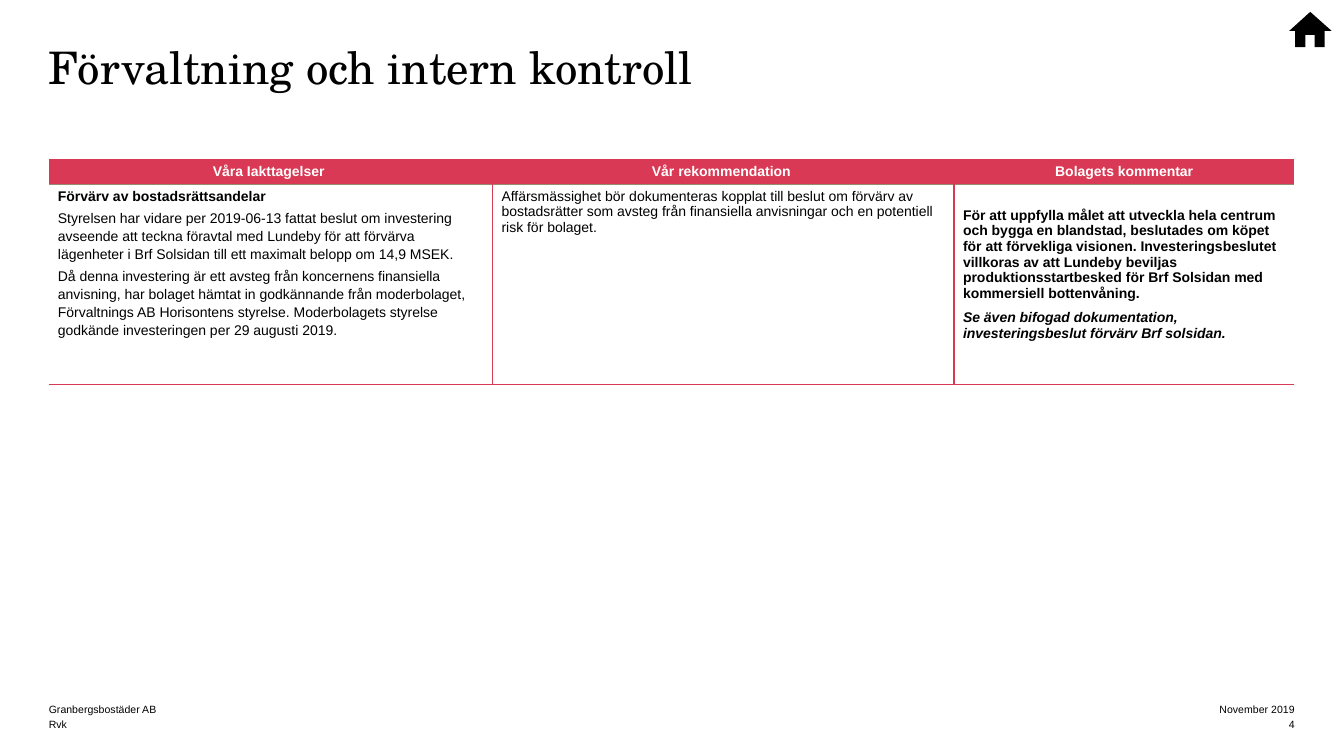
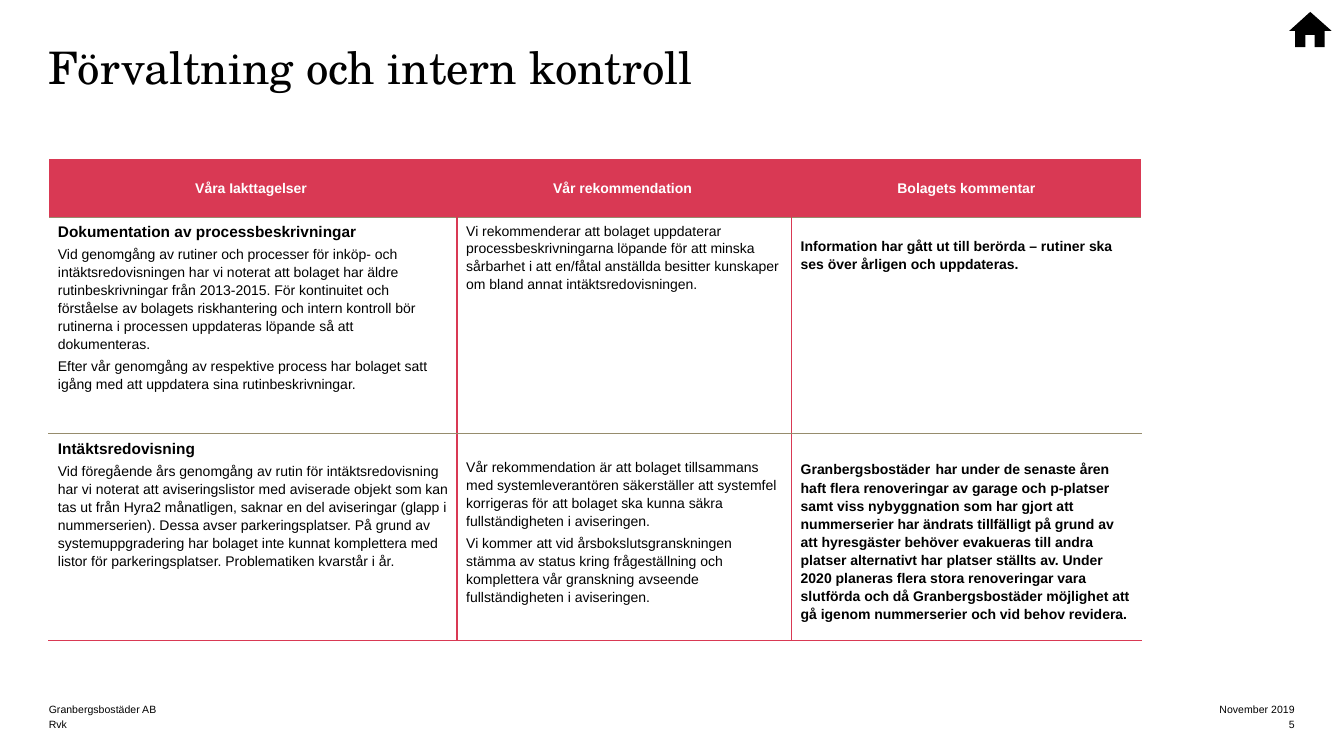
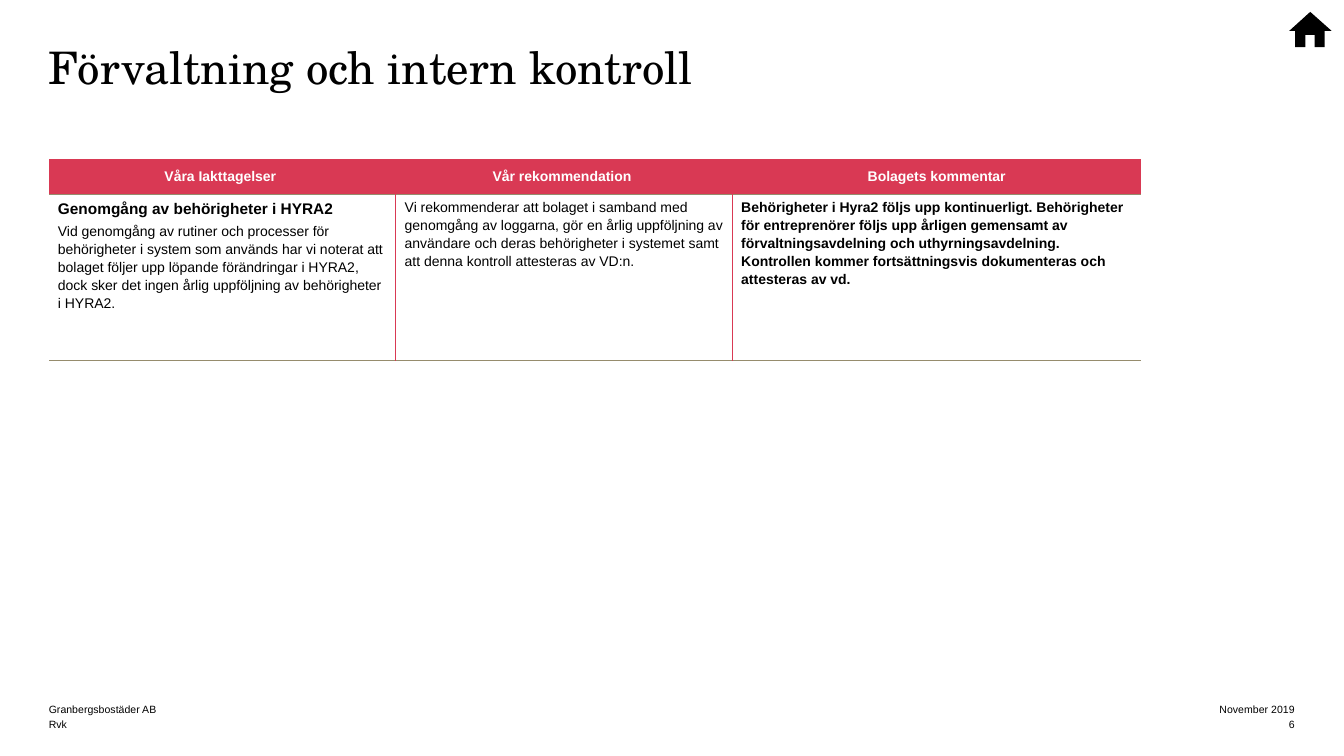
from lxml.etree import SubElement
from pptx import Presentation
from pptx.dml.color import RGBColor
from pptx.enum.text import MSO_ANCHOR, MSO_AUTO_SIZE, PP_ALIGN
from pptx.oxml.ns import qn
from pptx.util import Cm, Pt

# Shared look
RED, SAND, WHITE, BLACK = "D93954", "968C6D", "FFFFFF", "000000"
LEFT, WIDTH = 1.23, 31.4
TITLE = "Förvaltning och intern kontroll"
OWNER, FIRM, DATE = "Granbergsbostäder AB", "Rvk", "November 2019"
HEADS = ["Våra Iakttagelser ", "Vår rekommendation ", "Bolagets kommentar"]
HOUSE = [(41, 89), (41, 58), (64, 58), (64, 89), (89, 89), (89, 48),
         (107, 48), (53, 0), (0, 48), (15, 48), (15, 89)]


def rgb(code):
    return RGBColor.from_string(code)


def say(frame, text, size=10, color=BLACK, font="Arial", bold=False,
        ital=False, align=PP_ALIGN.LEFT, lead=1.15, before=3, after=0):
    """Add one paragraph; text is a string or a list of (string, size)."""
    para = frame.add_paragraph() if frame.text else frame.paragraphs[0]
    para.alignment, para.line_spacing = align, lead
    para.space_before, para.space_after = Pt(before), Pt(after)
    for part, pts in [(text, size)] if isinstance(text, str) else text:
        run = para.add_run()
        run.text = part
        run.font.name, run.font.size = font, Pt(pts)
        run.font.bold, run.font.italic = bold, ital
        run.font.color.rgb = rgb(color)


def trim(frame, anchor):
    """Remove the insets and fix the size of a text frame."""
    frame.margin_left = frame.margin_right = 0
    frame.margin_top = frame.margin_bottom = 0
    frame.word_wrap = True
    frame.auto_size = MSO_AUTO_SIZE.NONE
    frame.vertical_anchor = anchor


def add_title(slide):
    title = slide.shapes.title
    title.left, title.top = Cm(LEFT), Cm(1.2)
    title.width, title.height = Cm(30.3), Cm(2.95)
    trim(title.text_frame, MSO_ANCHOR.TOP)
    say(title.text_frame, TITLE, size=32, font="TeX Gyre Schola",
        lead=0.85, before=0)


def add_foot(slide, number):
    wide = 12
    right = LEFT + WIDTH - wide
    for row, pair in enumerate([(OWNER, DATE), (FIRM, str(number))]):
        sides = zip(pair, (LEFT, right), (PP_ALIGN.LEFT, PP_ALIGN.RIGHT))
        for text, x, align in sides:
            box = slide.shapes.add_textbox(
                Cm(x), Cm(17.65 + row * 0.38), Cm(wide), Cm(0.38))
            trim(box.text_frame, MSO_ANCHOR.BOTTOM)
            say(box.text_frame, text, size=7.5, align=align, lead=1, before=0)


def add_house(slide, x, y):
    form = slide.shapes.build_freeform(*HOUSE[0], scale=Cm(0.01))
    form.add_line_segments(HOUSE[1:], close=True)
    house = form.convert_to_shape(Cm(x), Cm(y))
    house.shadow.inherit = False
    house.fill.solid()
    house.fill.fore_color.rgb = rgb(BLACK)
    house.line.fill.background()


def edge(cell, **sides):
    """Draw cell borders, given in the order L, R, T, B; None hides one."""
    props = cell._tc.get_or_add_tcPr()
    for side, color in sides.items():
        points = 1 if side in "LR" else 0.75
        line = SubElement(props, qn("a:ln" + side), w=str(Pt(points)))
        if color:
            fill = SubElement(line, qn("a:solidFill"))
            SubElement(fill, qn("a:srgbClr"), val=color)
        else:
            SubElement(line, qn("a:noFill"))


def paint(cell, color, top):
    cell.fill.solid()
    cell.fill.fore_color.rgb = rgb(color)
    cell.margin_left = cell.margin_right = Cm(0.23)
    cell.margin_top, cell.margin_bottom = Cm(top), 0


def add_grid(slide, x, y, cols, rows, body, rules, lead):
    """Table with a red head; a body cell is (extra top gap, paragraphs)."""
    grid = slide.shapes.add_table(len(rows), len(cols), Cm(x), Cm(y),
                                  Cm(sum(cols)), Cm(sum(rows))).table
    for col, width in zip(grid.columns, cols):
        col.width = Cm(width)
    for row, height in zip(grid.rows, rows):
        row.height = Cm(height)
    # Head
    for c, text in enumerate(HEADS):
        cell = grid.cell(0, c)
        edge(cell, L=None, R=None, T=None, B=SAND)
        paint(cell, RED, 0)
        cell.vertical_anchor = MSO_ANCHOR.MIDDLE
        say(cell.text_frame, text, color=WHITE, bold=True,
            align=PP_ALIGN.CENTER, lead=lead, before=0)
    # Body
    last = len(cols) - 1
    tops = [SAND] + rules
    for r, line in enumerate(body):
        for c, (gap, paras) in enumerate(line):
            cell = grid.cell(r + 1, c)
            edge(cell, L=RED if c else WHITE, R=RED if c < last else WHITE,
                 T=tops[r], B=rules[r])
            paint(cell, WHITE, 0.1 + gap)
            for text, form in paras:
                say(cell.text_frame, text, **form)


# Paragraph formats
TEXT = {}
HEAD = {"size": 11, "bold": True}
BOLD = {"bold": True, "before": 0}
TIGHT = {"lead": 1}
NOTE = {"lead": 1, "bold": True, "after": 3}

PAGES = [
    {"cols": [11.18, 11.63, 8.58], "rows": [0.65, 5.03], "rules": [RED],
     "lead": 1, "body": [[
         (0, [
             ("Förvärv av bostadsrättsandelar", {"bold": True, "lead": 1}),
             ("Styrelsen har vidare per 2019-06-13 fattat beslut om "
              "investering avseende att teckna föravtal med Lundeby för att "
              "förvärva lägenheter i Brf Solsidan till ett maximalt belopp "
              "om 14,9 MSEK.", TEXT),
             ("Då denna investering är ett avsteg från koncernens "
              "finansiella anvisning, har bolaget hämtat in godkännande "
              "från moderbolaget, Förvaltnings AB Horisontens styrelse. "
              "Moderbolagets styrelse godkände investeringen per 29 augusti "
              "2019.", TEXT)]),
         (0, [
             ("Affärsmässighet bör dokumenteras kopplat till beslut om "
              "förvärv av bostadsrätter som avsteg från finansiella "
              "anvisningar och en potentiell risk för bolaget.", TIGHT)]),
         (0.48, [
             ("För att uppfylla målet att utveckla hela centrum och bygga "
              "en blandstad, beslutades om köpet för att förvekliga "
              "visionen. Investeringsbeslutet villkoras av att Lundeby "
              "beviljas produktionsstartbesked för Brf Solsidan med "
              "kommersiell bottenvåning.", NOTE),
             ("Se även bifogad dokumentation, investeringsbeslut förvärv "
              "Brf solsidan.", {**NOTE, "ital": True})])]]},
    {"cols": [10.29, 8.43, 8.81], "rows": [1.47, 5.46, 5.21],
     "rules": [SAND, RED], "lead": 1.07, "body": [[
         (0, [
             ("Dokumentation av processbeskrivningar", HEAD),
             ("Vid genomgång av rutiner och processer för inköp- och "
              "intäktsredovisningen har vi noterat att bolaget har äldre "
              "rutinbeskrivningar från 2013-2015. För kontinuitet och "
              "förståelse av bolagets riskhantering och intern kontroll bör "
              "rutinerna i processen uppdateras löpande så att "
              "dokumenteras.", TEXT),
             ("Efter vår genomgång av respektive process har bolaget satt "
              "igång med att uppdatera sina rutinbeskrivningar.", TEXT)]),
         (0, [
             ("Vi rekommenderar att bolaget uppdaterar "
              "processbeskrivningarna löpande för att minska sårbarhet i "
              "att en/fåtal anställda besitter kunskaper om bland annat "
              "intäktsredovisningen.", TEXT)]),
         (0.38, [
             ("Information har gått ut till berörda – rutiner ska ses över "
              "årligen och uppdateras.", BOLD)])], [
         (0, [
             ("Intäktsredovisning", HEAD),
             ("Vid föregående års genomgång av rutin för "
              "intäktsredovisning har vi noterat att aviseringslistor med "
              "aviserade objekt som kan tas ut från Hyra2 månatligen, saknar "
              "en del aviseringar (glapp i nummerserien). Dessa avser "
              "parkeringsplatser. På grund av systemuppgradering har bolaget "
              "inte kunnat komplettera med listor för parkeringsplatser. "
              "Problematiken kvarstår i år.", TEXT)]),
         (0.5, [
             ("Vår rekommendation är att bolaget tillsammans med "
              "systemleverantören säkerställer att systemfel korrigeras för "
              "att bolaget ska kunna säkra fullständigheten i "
              "aviseringen.", TEXT),
             ("Vi kommer att vid årsbokslutsgranskningen stämma av status "
              "kring frågeställning och komplettera vår granskning avseende "
              "fullständigheten i aviseringen.", TEXT)]),
         (0.4, [
             ([("Granbergsbostäder", 10), (" ", 14),
               ("har under de senaste åren haft flera renoveringar av garage "
                "och p-platser samt viss nybyggnation som har gjort att "
                "nummerserier har ändrats tillfälligt på grund av att "
                "hyresgäster behöver evakueras till andra platser "
                "alternativt har platser ställts av. Under 2020 planeras "
                "flera stora renoveringar vara slutförda och då "
                "Granbergsbostäder möjlighet att gå igenom nummerserier och "
                "vid behov revidera.", 10)], BOLD)])]]},
    {"cols": [8.74, 8.48, 10.31], "rows": [0.89, 4.19], "rules": [SAND],
     "lead": 1.07, "body": [[
         (0, [
             ("Genomgång av behörigheter i HYRA2", HEAD),
             ("Vid genomgång av rutiner och processer för behörigheter i "
              "system som används har vi noterat att bolaget följer upp "
              "löpande förändringar i HYRA2, dock sker det ingen årlig "
              "uppföljning av behörigheter i HYRA2.", TEXT)]),
         (0, [
             ("Vi rekommenderar att bolaget i samband med genomgång av "
              "loggarna, gör en årlig uppföljning av användare och deras "
              "behörigheter i systemet samt att denna kontroll attesteras "
              "av VD:n.", TEXT)]),
         (0, [
             ("Behörigheter i Hyra2 följs upp kontinuerligt. Behörigheter "
              "för entreprenörer följs upp årligen gemensamt av "
              "förvaltningsavdelning och uthyrningsavdelning. Kontrollen "
              "kommer fortsättningsvis dokumenteras och attesteras av "
              "vd.", BOLD)])]]},
]


def main():
    deck = Presentation()
    deck.slide_width, deck.slide_height = Cm(33.87), Cm(19.05)
    for number, page in enumerate(PAGES, 4):
        slide = deck.slides.add_slide(deck.slide_layouts[5])
        add_title(slide)
        add_foot(slide, number)
        add_grid(slide, LEFT, 4, **page)
        add_house(slide, 32.49, 0.3)
    deck.save("out.pptx")


if __name__ == "__main__":
    main()
